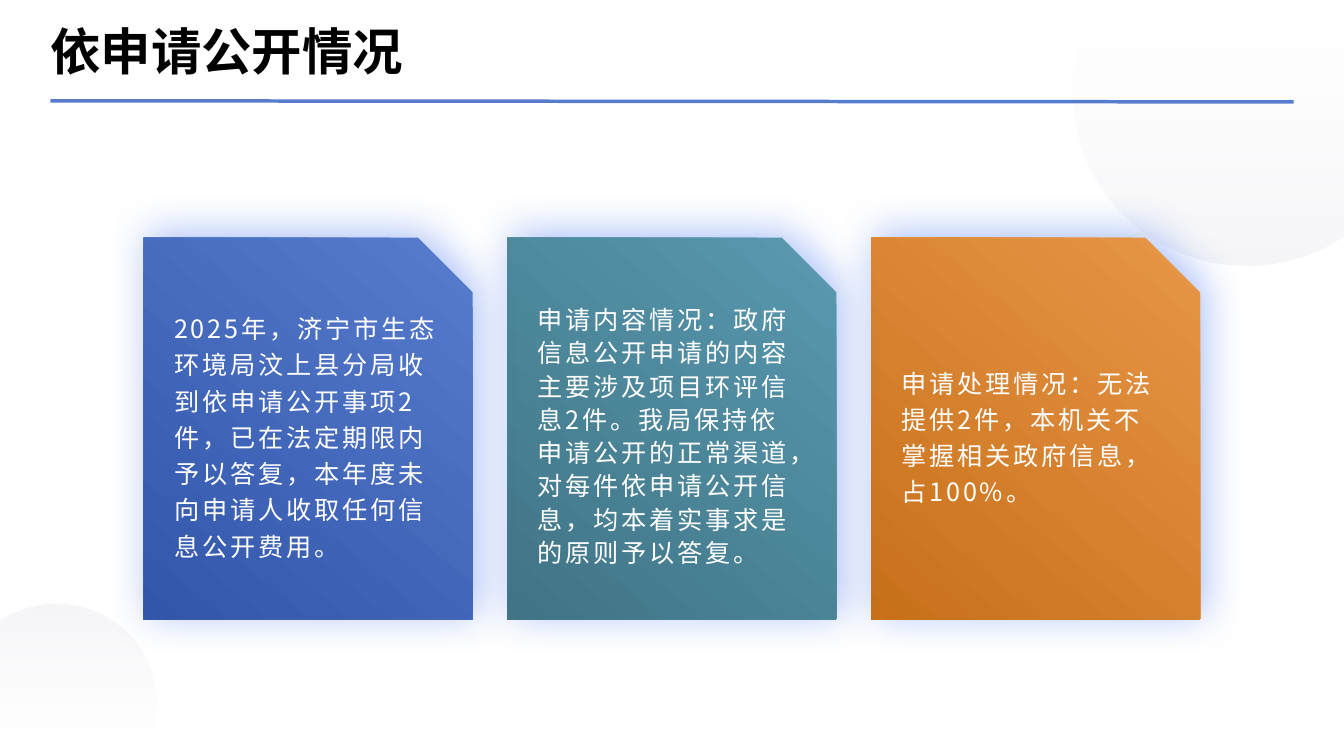
from lxml import etree
from pptx import Presentation
from pptx.dml.color import RGBColor
from pptx.enum.shapes import MSO_CONNECTOR, MSO_SHAPE
from pptx.enum.text import MSO_ANCHOR
from pptx.oxml.ns import qn
from pptx.util import Pt

SNIPPED = MSO_SHAPE.SNIP_1_RECTANGLE
STRAIGHT = MSO_CONNECTOR.STRAIGHT
MIDDLE = MSO_ANCHOR.MIDDLE
FONT = "Noto Sans CJK SC"
COLORS = {
    "title": "000000",
    "body": "FFFFFF",
    "rule": "577CCE",
    "glow": "4575F0",
    "mist_light": "FFFFFF",
    "mist_dark": "D8D8E4",
    "blue_light": "577CCE",
    "blue_dark": "3257AA",
    "teal_light": "5999AF",
    "teal_dark": "407486",
    "orange_light": "E79647",
    "orange_dark": "C8701A",
}


def paint_gradient(shape, tone, angle, opacities=(100, 100)):
    shape.line.fill.background()
    shape.shadow.inherit = False
    shape.fill.gradient()
    shape.fill.gradient_angle = 360 - angle
    stops = shape.fill.gradient_stops
    for stop, shade, opacity in zip(stops, ("light", "dark"), opacities):
        stop.color.rgb = RGBColor.from_string(COLORS[f"{tone}_{shade}"])
        if opacity < 100:
            color = stop._gs.find(qn("a:srgbClr"))
            etree.SubElement(color, qn("a:alpha"), val=str(opacity * 1000))


def write_text(slide, box, text, size, color):
    frame = slide.shapes.add_textbox(*[Pt(v) for v in box]).text_frame
    frame.word_wrap = True
    frame.vertical_anchor = MIDDLE
    paragraph = frame.paragraphs[0]
    paragraph.text = text
    font = paragraph.font
    font.size = Pt(size)
    font.name = FONT
    font.color.rgb = RGBColor.from_string(COLORS[color])
    etree.SubElement(font._rPr, qn("a:ea"), typeface=FONT)
    return frame


deck = Presentation()
deck.slide_width, deck.slide_height = Pt(960), Pt(540)
slide = deck.slides.add_slide(deck.slide_layouts[6])

straight_part = [(0.1, 0), (1, 0), (1, 0.89), (0.95, 0.92)]
curved_part = [
    (0.86, 0.97), (0.75, 1), (0.64, 1),
    (0.29, 1), (0, 0.71), (0, 0.35),
    (0, 0.24), (0.03, 0.13), (0.08, 0.04),
]
mist_boxes = [(766.1, 0, 193.9, 189.4, 0), (0, 431.3, 111.6, 108.7, 180)]
for left, top, width, height, turn in mist_boxes:
    rim = [(Pt(left + x * width), Pt(top + y * height))
           for x, y in straight_part + curved_part]
    outline = slide.shapes.build_freeform(*rim[0])
    outline.add_line_segments(rim[1:], close=True)
    mist = outline.convert_to_shape()
    mist.rotation = turn
    paint_gradient(mist, "mist", 90, (10, 24))
    segments = list(mist._element.iter(qn("a:lnTo")))[len(straight_part) - 1:]
    for first, second, third in zip(segments[::3], segments[1::3], segments[2::3]):
        first.tag = qn("a:cubicBezTo")
        for segment in (second, third):
            first.append(segment[0])
            segment.getparent().remove(segment)

rule = slide.shapes.add_connector(STRAIGHT, Pt(36), Pt(72), Pt(924), Pt(72.8))
rule.line.color.rgb = RGBColor.from_string(COLORS["rule"])
rule.line.width = Pt(2.5)
etree.SubElement(rule._element.spPr, qn("a:effectLst"))

title = write_text(slide, (36, 12, 888, 48), "依申请公开情况", 36, "title")
title.margin_left = title.margin_right = title.margin_top = title.margin_bottom = 0
title.paragraphs[0].font.bold = True

topics = [
    ("blue", 1.2, "2025年，济宁市生态环境局汶上县分局收到依申请公开事项2件，已在法定期限内予以答复，本年度未向申请人收取任何信息公开费用。"),
    ("teal", 1.1, "申请内容情况：政府信息公开申请的内容主要涉及项目环评信息2件。我局保持依申请公开的正常渠道，对每件依申请公开信息，均本着实事求是的原则予以答复。"),
    ("orange", 1.2, "申请处理情况：无法提供2件，本机关不掌握相关政府信息，占100%。"),
]
CARD_LEFT, CARD_TOP, CARD_WIDTH, CARD_HEIGHT, CARD_STEP = 102.6, 169.7, 235, 272.8, 259.8
card_lefts = [CARD_LEFT + index * CARD_STEP for index in range(len(topics))]

for left, (tone, _, _) in reversed(list(zip(card_lefts, topics))):
    card = slide.shapes.add_shape(
        SNIPPED, Pt(left), Pt(CARD_TOP), Pt(CARD_WIDTH), Pt(CARD_HEIGHT))
    paint_gradient(card, tone, 130)
    effects = card._element.spPr.find(qn("a:effectLst"))
    glow = etree.SubElement(
        effects, qn("a:outerShdw"), blurRad=str(Pt(30)), dist=str(Pt(5)),
        dir=str(315 * 60000), algn="ctr", rotWithShape="0")
    glow_color = etree.SubElement(glow, qn("a:srgbClr"), val=COLORS["glow"])
    etree.SubElement(glow_color, qn("a:alpha"), val="45000")

for left, (_, spacing, text) in zip(card_lefts, topics):
    body = write_text(slide, (left + 14.7, 199, 206, 222.5), text, 18, "body")
    paragraph = body.paragraphs[0]
    paragraph.line_spacing = spacing
    paragraph.font._rPr.set("spc", "200")

deck.save("out.pptx")
